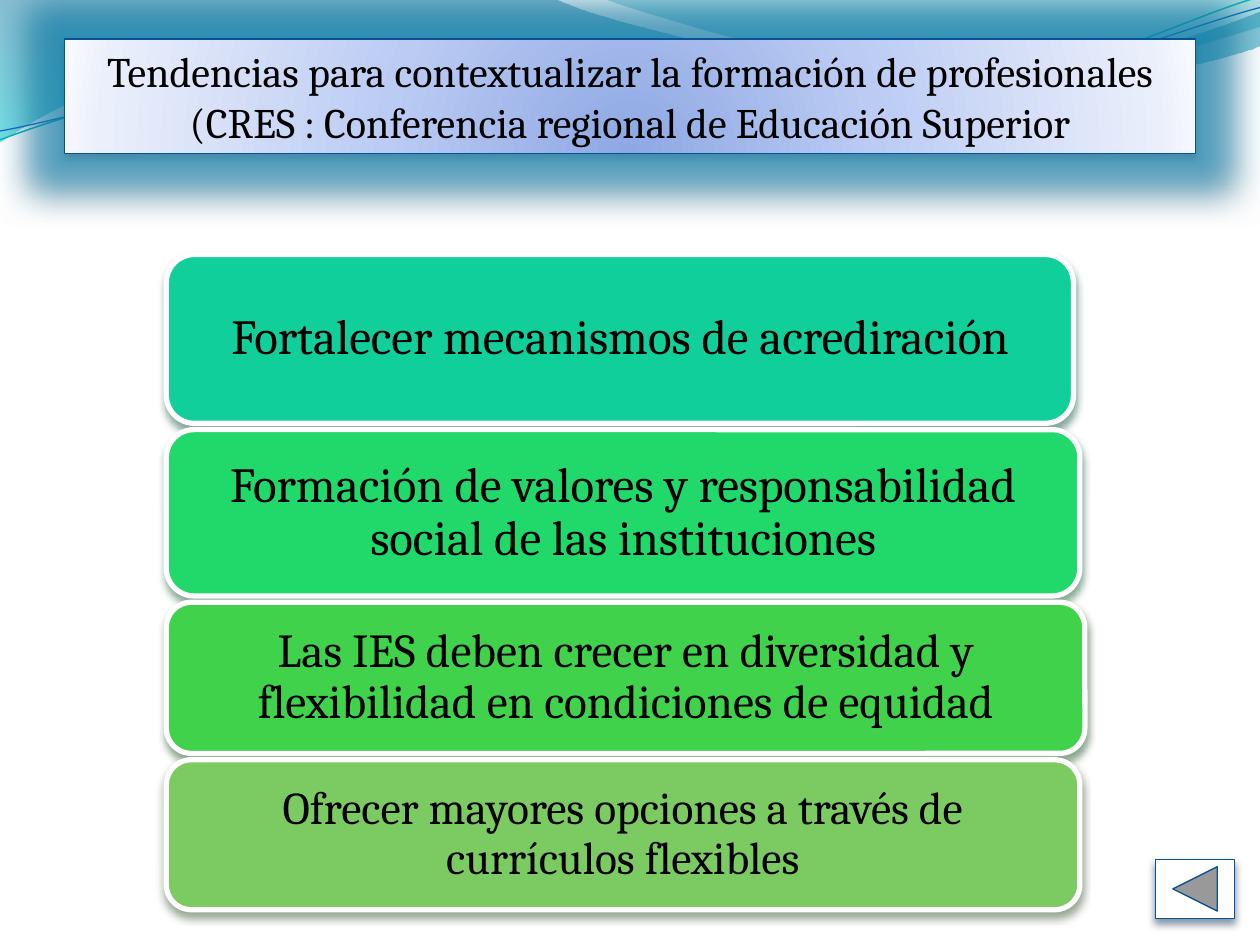
from lxml import etree
from pptx import Presentation
from pptx.dml.color import RGBColor
from pptx.enum.shapes import MSO_SHAPE
from pptx.enum.text import MSO_ANCHOR, MSO_AUTO_SIZE, PP_ALIGN
from pptx.oxml.ns import qn
from pptx.util import Inches, Pt

ROUND = MSO_SHAPE.ROUNDED_RECTANGLE
BACK = MSO_SHAPE.ACTION_BUTTON_BACK_OR_PREVIOUS
MIDDLE = MSO_ANCHOR.MIDDLE
GROW = MSO_AUTO_SIZE.SHAPE_TO_FIT_TEXT
CENTER = PP_ALIGN.CENTER

FONT = "Cambria"
BLACK = RGBColor(0x00, 0x00, 0x00)
WHITE = RGBColor(0xFF, 0xFF, 0xFF)
NAVY = RGBColor(0x09, 0x52, 0x95)
INK = RGBColor(0x04, 0x27, 0x47)
GLOW = RGBColor(0x0F, 0x8C, 0xC0)
TEAL = RGBColor(0x0A, 0xB8, 0xBF)
BLUE = RGBColor(0x0F, 0x6F, 0xC6)

DEEP = [(0, RGBColor(0x00, 0x74, 0xA1), 45), (100, RGBColor(0x00, 0xC6, 0xCF), 55)]
PALE = [(0, RGBColor(0x00, 0xA1, 0xA9), 30), (80, RGBColor(0x00, 0x8B, 0xBF), 45)]
SKY = [
    (0, RGBColor(0x8D, 0xA8, 0xE3), 100),
    (43, RGBColor(0xBB, 0xCB, 0xF3), 100),
    (93, RGBColor(0xEA, 0xEF, 0xFB), 100),
    (100, RGBColor(0xF7, 0xF9, 0xFF), 100),
]

WAVE = [
    [(0, 0)], [(4.4, -0.01)],
    [(4.76, 0.17), (6.64, 0.63), (7.58, 0.63)],
    [(8.53, 0.63), (9.58, 0.26), (10, 0.09)],
    [(10.01, 0.36)],
    [(9.83, 0.44), (8.7, 0.76), (7.46, 0.75)],
    [(6.22, 0.75), (3.82, 0.28), (2.57, 0.34)],
    [(1.29, 0.36), (0.46, 0.83), (-0.01, 1.13)],
]
CREST = [
    [(4.79, -0.01)],
    [(5.09, 0.11), (6.82, 0.62), (7.69, 0.65)],
    [(8.56, 0.69), (9.61, 0.32), (10, 0.21)],
    [(10, 0)],
]
HIGH = [
    [(0, 1.11)],
    [(0.48, 0.93), (1.58, 0.57), (2.77, 0.52)],
    [(3.95, 0.47), (5.93, 0.89), (7.13, 0.8)],
    [(8.33, 0.71), (9.38, 0.15), (9.98, -0.02)],
]
LOW = [
    [(0, 1.04)],
    [(0.47, 0.96), (1.64, 0.61), (2.83, 0.56)],
    [(4.03, 0.51), (5.97, 0.84), (7.17, 0.75)],
    [(8.36, 0.67), (9.41, 0.21), (10, 0.06)],
]

TITLE = [
    "Tendencias para contextualizar la formación de profesionales",
    "(CRES : Conferencia regional de Educación Superior",
]
TRENDS = [
    ("Fortalecer mecanismos de acrediración", 7.2, 1.34, 28,
     RGBColor(0x10, 0xCF, 0x9B), RGBColor(0x04, 0x4A, 0x37)),
    ("Formación de valores y responsabilidad social de las instituciones", 7.25, 1.32, 28,
     RGBColor(0x21, 0xD8, 0x6A), RGBColor(0x0A, 0x4D, 0x25)),
    ("Las IES deben crecer en diversidad y flexibilidad en condiciones de equidad", 7.29, 1.2, 27,
     RGBColor(0x41, 0xD2, 0x4C), RGBColor(0x15, 0x4B, 0x19)),
    ("Ofrecer mayores opciones a través de currículos flexibles", 7.25, 1.19, 26,
     RGBColor(0x7C, 0xCA, 0x62), RGBColor(0x2B, 0x48, 0x21)),
]


def node(parent, tag, **attrs):
    return etree.SubElement(parent, qn(tag), {k: str(v) for k, v in attrs.items()})


def tint(parent, color, alpha):
    node(node(parent, "a:srgbClr", val=color), "a:alpha", val=alpha * 1000)


def blend(shape, stops, focus=None):
    shape.fill.gradient()
    grad = shape._element.spPr.find(qn("a:gradFill"))
    for child in list(grad):
        grad.remove(child)
    ramp = node(grad, "a:gsLst")
    for pos, color, alpha in stops:
        tint(node(ramp, "a:gs", pos=pos * 1000), color, alpha)
    if focus:
        node(node(grad, "a:path", path="circle"), "a:fillToRect", **focus)
    else:
        node(grad, "a:lin", ang=90 * 60000, scaled=1)


def shade(shape, color, alpha=48, blur=4.5, dist=3, glow=None):
    shape.shadow.inherit = False
    effects = shape._element.spPr.find(qn("a:effectLst"))
    if glow:
        tint(node(effects, "a:glow", rad=Pt(glow)), GLOW, 60)
    drop = node(effects, "a:outerShdw", blurRad=Pt(blur), dist=Pt(dist),
                dir=90 * 60000, rotWithShape=0)
    tint(drop, color, alpha)


def edge(shape, color, width):
    shape.line.color.rgb = color
    shape.line.width = Pt(width)


def write(par, text, size):
    par.alignment = CENTER
    run = par.add_run()
    run.text = text
    run.font.name = FONT
    run.font.size = Pt(size)
    run.font.color.rgb = BLACK


def draw(slide, steps, left, top, close):
    ends = [(left + Inches(x), top + Inches(y)) for x, y in (step[-1] for step in steps)]
    pen = slide.shapes.build_freeform(*ends[0])
    pen.add_line_segments(ends[1:], close=close)
    shape = pen.convert_to_shape()
    shape.shadow.inherit = False
    lines = list(shape._element.iter(qn("a:lnTo")))
    for line, step in zip(lines, steps[1:]):
        if len(step) == 3:
            curve = etree.Element(qn("a:cubicBezTo"))
            for x, y in step:
                node(curve, "a:pt", x=left + Inches(x) - shape.left,
                     y=top + Inches(y) - shape.top)
            line.getparent().replace(line, curve)
    return shape


def add_waves(slide, left, top):
    for steps, stops in ((WAVE, DEEP), (CREST, PALE)):
        shape = draw(slide, steps, left, top, True)
        blend(shape, stops)
        shape.line.fill.background()
    for steps, color, width in ((HIGH, TEAL, 0.85), (LOW, BLUE, 0.75)):
        shape = draw(slide, steps, left, top, False)
        shape.fill.background()
        edge(shape, color, width)


def add_trends(slide, left, top, gap):
    for text, width, height, size, color, dark in TRENDS:
        card = slide.shapes.add_shape(ROUND, left, top, Inches(width), Inches(height))
        card.fill.solid()
        card.fill.fore_color.rgb = color
        edge(card, WHITE, 3)
        shade(card, dark)
        frame = card.text_frame
        frame.word_wrap = True
        frame.vertical_anchor = MIDDLE
        frame.margin_left = frame.margin_right = Inches(0.12)
        par = frame.paragraphs[0]
        par.line_spacing = 0.9
        write(par, text, size)
        top += Inches(height) + gap


def add_title(slide, left, top, width, height):
    title = slide.shapes.title
    title.left, title.top, title.width, title.height = left, top, width, height
    blend(title, SKY, {"l": 50000, "t": 130000, "r": 50000, "b": -30000})
    edge(title, NAVY, 0.75)
    shade(title, BLACK, 43, 5, 2, glow=40)
    frame = title.text_frame
    frame.word_wrap = True
    frame.auto_size = GROW
    frame.vertical_anchor = MIDDLE
    for i, text in enumerate(TITLE):
        write(frame.add_paragraph() if i else frame.paragraphs[0], text, 24)
    tree = slide.shapes._spTree
    tree.remove(title._element)
    tree.append(title._element)


def add_back(slide, left, top, width, height):
    back = slide.shapes.add_shape(BACK, left, top, width, height)
    back.fill.solid()
    back.fill.fore_color.rgb = WHITE
    edge(back, NAVY, 0.75)
    shade(back, INK)


def main():
    deck = Presentation()
    deck.slide_width, deck.slide_height = Inches(10), Inches(7.5)
    slide = deck.slides.add_slide(deck.slide_layouts[5])
    add_waves(slide, Inches(0), Inches(0))
    add_trends(slide, Inches(1.32), Inches(2.02), Inches(0.05))
    add_title(slide, Inches(0.51), Inches(0.31), Inches(8.98), Inches(0.91))
    add_back(slide, Inches(9.17), Inches(6.82), Inches(0.63), Inches(0.47))
    deck.save("out.pptx")


if __name__ == "__main__":
    main()
